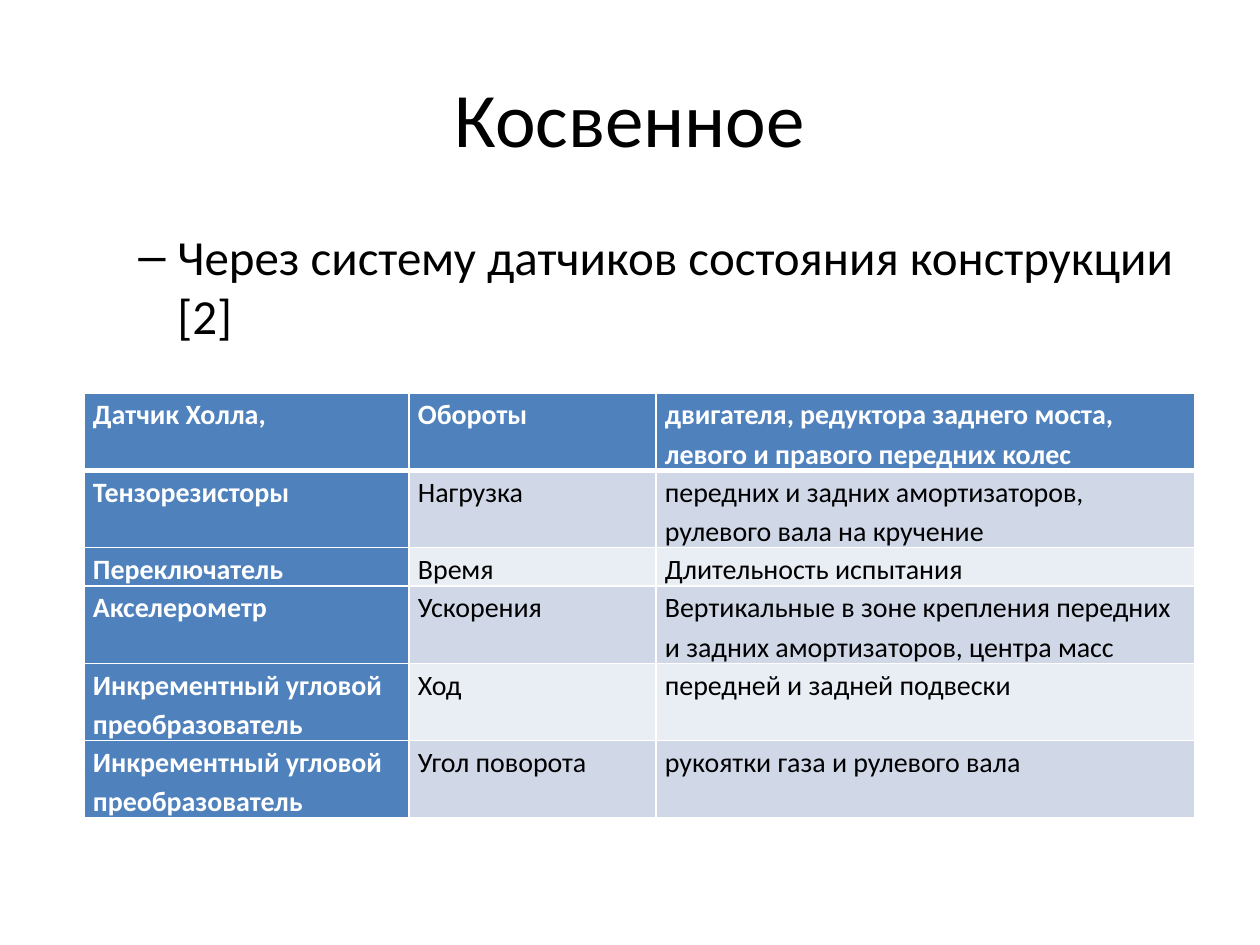
import pptx
import pptx.dml.color
import pptx.enum.text
import pptx.oxml.ns
import pptx.util
from lxml import etree

SCALE = 914400 // 126
ROWS = [
    ("Датчик Холла,", "Обороты",
     "двигателя, редуктора заднего моста, левого и правого передних колес"),
    ("Тензорезисторы", "Нагрузка",
     "передних и задних амортизаторов, рулевого вала на кручение"),
    ("Переключатель", "Время", "Длительность испытания"),
    ("Акселерометр", "Ускорения",
     "Вертикальные в зоне крепления передних и задних амортизаторов, центра масс"),
    ("Инкрементный угловой преобразователь", "Ход",
     "передней и задней подвески"),
    ("Инкрементный угловой преобразователь", "Угол поворота",
     "рукоятки газа и рулевого вала"),
]
WIDTHS = [325, 247, 539]
HEIGHTS = [76, 76, 37, 76, 76, 76]


def px(num):
    return pptx.util.Emu(num * SCALE)


def tint(code):
    return pptx.dml.color.RGBColor.from_string(code)


def node(root, tag, **attrs):
    return etree.SubElement(root, pptx.oxml.ns.qn(tag), **attrs)


def style(para, size, color="000000", bold=False):
    for run in para.runs:
        font = run.font
        font.name = "Calibri"
        font.size = pptx.util.Pt(size)
        font.bold = bold
        font.color.rgb = tint(color)


def add_text(slide, box, text, size):
    shape = slide.shapes.add_textbox(*map(px, box))
    frame = shape.text_frame
    frame.word_wrap = True
    frame.text = text
    para = frame.paragraphs[0]
    style(para, size)
    return frame, para


def add_title(slide):
    frame, para = add_text(slide, (63, 38, 1134, 157), "Косвенное", 44)
    frame.vertical_anchor = pptx.enum.text.MSO_ANCHOR.MIDDLE
    para.alignment = pptx.enum.text.PP_ALIGN.CENTER


def add_point(slide):
    text = "Через систему датчиков состояния конструкции [2]"
    frame, para = add_text(slide, (63, 220, 1134, 624), text, 28)
    para.space_before = pptx.util.Pt(5.6)
    props = para._p.get_or_add_pPr()
    props.set("marL", str(px(102)))
    props.set("indent", str(px(-39)))
    node(props, "a:buFont", typeface="Arial")
    node(props, "a:buChar", char="–")


def add_edges(cell, row):
    props = cell._tc.get_or_add_tcPr()
    for side in "LRTB":
        thick = (row, side) in ((0, "B"), (1, "T"))
        width = pptx.util.Pt(3 if thick else 1)
        line = node(props, "a:ln" + side, w=str(width))
        node(node(line, "a:solidFill"), "a:srgbClr", val="FFFFFF")


def fill_cell(cell, text, row, col):
    head = row == 0 or col == 0
    cell.margin_left = cell.margin_right = px(9)
    cell.margin_top = cell.margin_bottom = 0
    cell.text = text
    para = cell.text_frame.paragraphs[0]
    para.line_spacing = 1.15
    style(para, 16, "FFFFFF" if head else "000000", head)
    add_edges(cell, row)
    band = "D0D8E8" if row % 2 else "E9EDF4"
    cell.fill.solid()
    cell.fill.fore_color.rgb = tint("4F81BD" if head else band)


def add_grid(slide):
    box = (84, 393, sum(WIDTHS), sum(HEIGHTS))
    frame = slide.shapes.add_table(len(ROWS), len(WIDTHS), *map(px, box))
    table = frame.table
    table.first_col = True
    for col, width in zip(table.columns, WIDTHS):
        col.width = px(width)
    for row, high in zip(table.rows, HEIGHTS):
        row.height = px(high)
    for row, texts in enumerate(ROWS):
        for col, text in enumerate(texts):
            fill_cell(table.cell(row, col), text, row, col)


def main():
    deck = pptx.Presentation()
    deck.slide_width = px(1260)
    deck.slide_height = px(945)
    slide = deck.slides.add_slide(deck.slide_layouts[6])
    add_title(slide)
    add_point(slide)
    add_grid(slide)
    deck.save("out.pptx")


if __name__ == "__main__":
    main()
